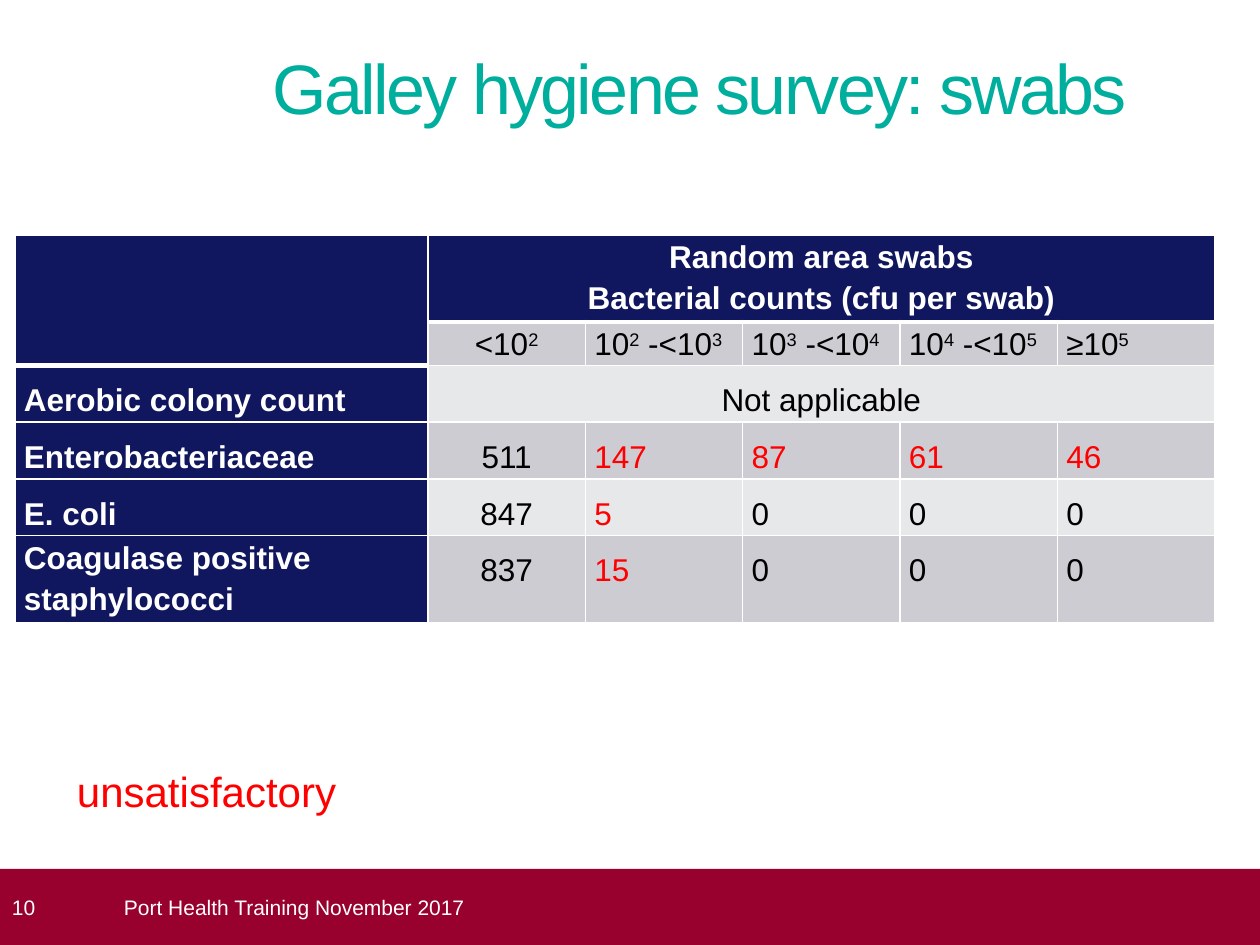
import pptx
import pptx.dml.color
import pptx.enum.shapes
import pptx.enum.text
import pptx.oxml
import pptx.oxml.ns
import pptx.util

RGBColor = pptx.dml.color.RGBColor
Align = pptx.enum.text.PP_ALIGN
Anchor = pptx.enum.text.MSO_ANCHOR

PX = 914400 // 126
WHITE = RGBColor(0xFF, 0xFF, 0xFF)
BLACK = RGBColor(0, 0, 0)
RED = RGBColor(0xFF, 0, 0)
TEAL = RGBColor(0x00, 0xAE, 0x9E)
NAVY = RGBColor(0x11, 0x17, 0x5E)
MAROON = RGBColor(0x98, 0x00, 0x2E)
GREY = RGBColor(0xCC, 0xCC, 0xD2)
LIGHT_GREY = RGBColor(0xE7, 0xE8, 0xEA)


def write_text(frame, text, size=18, color=BLACK, bold=False, align=Align.LEFT,
               line_spacing=None, letter_spacing=None):
    """Fill a frame; each line is a paragraph and ^ raises the next character."""
    for index, line in enumerate(text.split("\n")):
        paragraph = frame.add_paragraph() if index else frame.paragraphs[0]
        paragraph.alignment = align
        if line_spacing:
            paragraph.line_spacing = line_spacing
        first, *raised = line.split("^")
        pieces = [(first, False)]
        for part in raised:
            pieces += [(part[0], True), (part[1:], False)]
        for piece, superscript in pieces:
            if not piece:
                continue
            run = paragraph.add_run()
            run.text = piece
            run.font.name = "Arial"
            run.font.size = pptx.util.Pt(size)
            run.font.bold = bold
            run.font.color.rgb = color
            properties = run._r.get_or_add_rPr()
            if superscript:
                properties.set("baseline", "30000")
            if letter_spacing:
                properties.set("spc", str(int(letter_spacing * 100)))


def set_margins(target, left, top, right, bottom):
    target.margin_left, target.margin_top = left * PX, top * PX
    target.margin_right, target.margin_bottom = right * PX, bottom * PX


def set_borders(cell, top=1, bottom=1):
    properties = cell._tc.get_or_add_tcPr()
    for side, width in (("L", 1), ("R", 1), ("T", top), ("B", bottom)):
        properties.append(pptx.oxml.parse_xml(
            f'<a:ln{side} {pptx.oxml.ns.nsdecls("a")} w="{width * 12700}">'
            f'<a:solidFill><a:srgbClr val="{WHITE}"/></a:solidFill></a:ln{side}>'))


class SlideBuilder:
    def __init__(self, slide):
        self.slide = slide

    def text(self, box, text, margins=(0, 0, 0, 0), anchor=Anchor.TOP, **style):
        shape = self.slide.shapes.add_textbox(*(value * PX for value in box))
        self.fill_frame(shape.text_frame, text, margins, anchor, style)

    def rectangle(self, box, fill, text, margins, **style):
        shape = self.slide.shapes.add_shape(
            pptx.enum.shapes.MSO_SHAPE.RECTANGLE, *(value * PX for value in box))
        shape.shadow.inherit = False
        shape.fill.solid()
        shape.fill.fore_color.rgb = fill
        shape.line.fill.background()
        self.fill_frame(shape.text_frame, text, margins, Anchor.MIDDLE, style)

    def fill_frame(self, frame, text, margins, anchor, style):
        frame.word_wrap = True
        frame.vertical_anchor = anchor
        set_margins(frame, *margins)
        write_text(frame, text, **style)

    def table(self, left, top, widths, heights):
        graphic = self.slide.shapes.add_table(
            len(heights), len(widths), left * PX, top * PX,
            sum(widths), sum(heights) * PX)
        table = graphic.table
        table.first_row = table.horz_banding = False
        for column, width in zip(table.columns, widths):
            column.width = width
        for row, height in zip(table.rows, heights):
            row.height = height * PX
        return table

    def cell(self, cell, text, fill, top=1, bottom=1, **style):
        set_margins(cell, 9, 0, 9, 0)
        set_borders(cell, top, bottom)
        cell.fill.solid()
        cell.fill.fore_color.rgb = fill
        write_text(cell.text_frame, text, **style)


def add_swab_table(builder):
    count_columns = 5
    widths = [413 * PX] + [787 * PX // count_columns] * count_columns
    table = builder.table(15, 235, widths, [78, 39, 50, 50, 50, 78])

    # Header rows
    table.cell(0, 0).merge(table.cell(1, 0))
    table.cell(0, 1).merge(table.cell(0, count_columns))
    header = "Random area swabs\nBacterial counts (cfu per swab)"
    for column in range(count_columns + 1):
        builder.cell(table.cell(0, column), header if column == 1 else "", NAVY,
                     bottom=3, color=WHITE, bold=True, align=Align.CENTER,
                     line_spacing=1.15)
    builder.cell(table.cell(1, 0), "", NAVY, bottom=3)
    ranges = ["<10^2", "10^2 -<10^3", "10^3 -<10^4", "10^4 -<10^5", "≥10^5"]
    for column, text in enumerate(ranges, 1):
        builder.cell(table.cell(1, column), text, GREY, top=3, line_spacing=1.15,
                     align=Align.CENTER if column == 1 else Align.LEFT)

    # Result rows: label, counts, number of unsatisfactory counts after the first
    results = [
        ("Aerobic colony count", ["Not applicable", "", "", "", ""], 0),
        ("Enterobacteriaceae", ["511", "147", "87", "61", "46"], 4),
        ("E. coli", ["847", "5", "0", "0", "0"], 1),
        ("Coagulase positive staphylococci", ["837", "15", "0", "0", "0"], 1),
    ]
    table.cell(2, 1).merge(table.cell(2, count_columns))
    for row, (label, counts, unsatisfactory) in enumerate(results, 2):
        builder.cell(table.cell(row, 0), label, NAVY, top=3 if row == 2 else 1,
                     color=WHITE, bold=True,
                     line_spacing=1.15 if row == 5 else 1.5)
        for column, count in enumerate(counts, 1):
            builder.cell(table.cell(row, column), count,
                         GREY if row % 2 else LIGHT_GREY, line_spacing=1.5,
                         color=RED if 1 < column <= 1 + unsatisfactory else BLACK,
                         align=Align.CENTER if column == 1 else Align.LEFT)


def main():
    presentation = pptx.Presentation()
    presentation.slide_width = pptx.util.Inches(10)
    presentation.slide_height = pptx.util.Inches(7.5)
    builder = SlideBuilder(presentation.slides.add_slide(presentation.slide_layouts[6]))

    # Title
    builder.text((273, 45, 1106, 90), "Galley hygiene survey: swabs",
                 size=40, color=TEAL, letter_spacing=-1.5)

    add_swab_table(builder)

    # Footer
    builder.rectangle((0, 869, 1260, 76), MAROON, "10", (12, 0, 13, 0),
                      size=12, color=WHITE)
    builder.text((124, 869, 1111, 76), "Port Health Training November 2017",
                 anchor=Anchor.MIDDLE, size=12, color=WHITE)

    # Colour key
    builder.text((64, 760, 674, 63), "unsatisfactory", margins=(13, 6, 13, 6),
                 size=24, color=RED)

    presentation.save("out.pptx")


if __name__ == "__main__":
    main()
